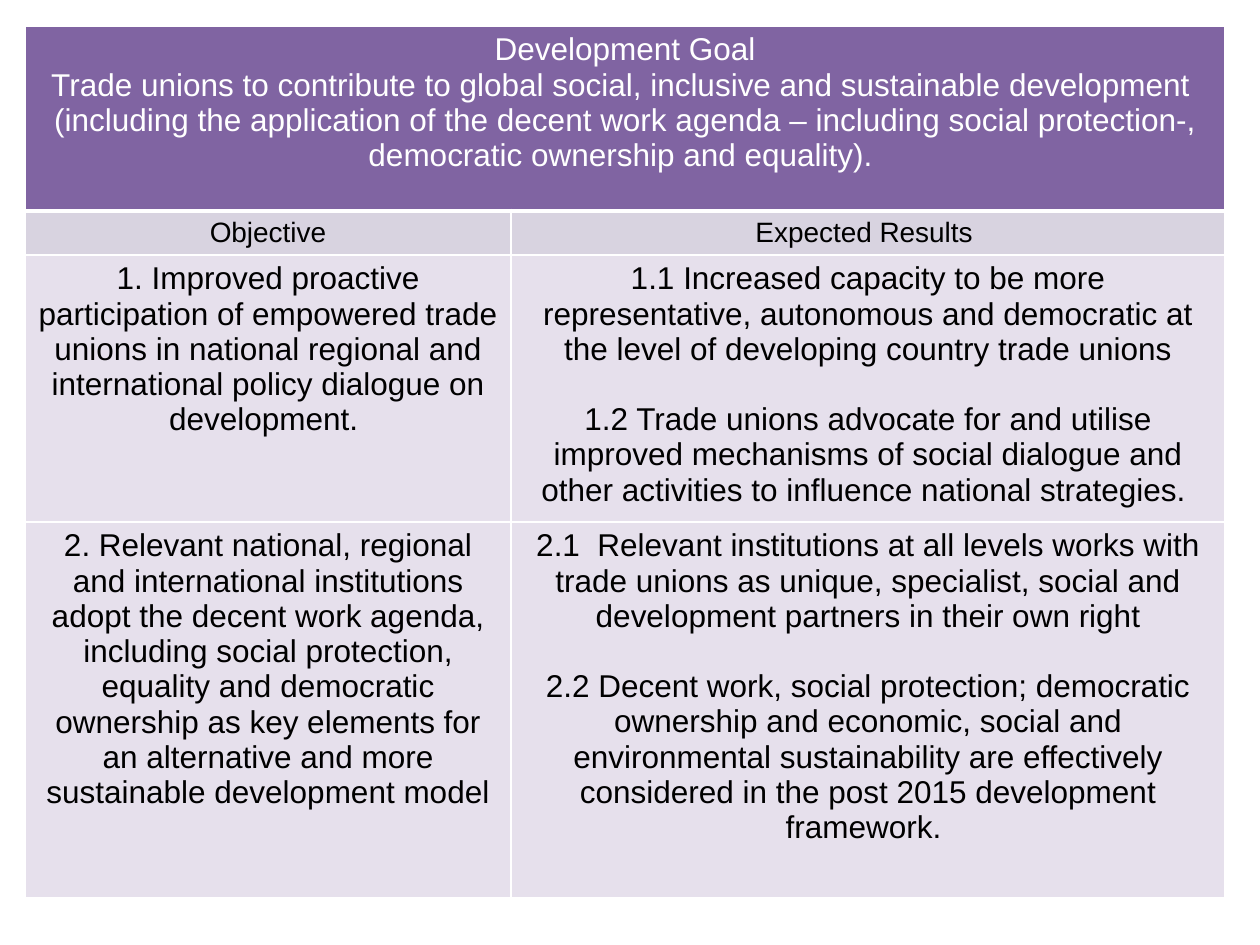
"""Build a slide with a development goal, its objectives and expected results."""
from lxml import etree
from pptx import Presentation
from pptx.dml.color import RGBColor
from pptx.enum.text import PP_ALIGN
from pptx.oxml.ns import qn
from pptx.util import Emu, Pt

CENTER = PP_ALIGN.CENTER
PX = 914400 / 126
SLIDE_SIZE = (1260, 945)
TABLE_ORIGIN = (25, 26)
COLUMN_WIDTHS = (486, 714)
WHITE, BLACK = "FFFFFF", "000000"

GOAL = [
    "Development Goal",
    "Trade unions to contribute to global social, inclusive and sustainable development  "
    "(including the application of the decent work agenda – including social protection-, "
    "democratic ownership and equality). ",
]
HEADINGS = (["Objective"], ["Expected Results "])
FIRST_OBJECTIVE = (
    ["1. Improved proactive participation of empowered trade unions in national regional "
     "and international policy dialogue on development. "],
    ["1.1 Increased capacity to be more representative, autonomous and democratic at the "
     "level of developing country trade unions",
     "1.2 Trade unions advocate for and utilise improved mechanisms of social dialogue and "
     "other activities to influence national strategies. "],
)
SECOND_OBJECTIVE = (
    ["2. Relevant national, regional and international institutions adopt the decent work "
     "agenda, including social protection, equality and democratic ownership as key elements "
     "for an alternative and more sustainable development model"],
    ["2.1  Relevant institutions at all levels works with trade unions as unique, specialist, "
     "social and development partners in their own right",
     "2.2 Decent work, social protection; democratic ownership and economic, social and "
     "environmental sustainability are effectively considered in the post 2015 development "
     "framework. "],
)
GOAL_STYLE = {"fill": "8064A2", "color": WHITE, "bottom": 3}
RESULT_STYLE = {"fill": "E6E0EC", "gap": 20}
ROWS = [
    (185, (GOAL, []), GOAL_STYLE),
    (44, HEADINGS, {"fill": "D8D3E0", "size": 16}),
    (267, FIRST_OBJECTIVE, RESULT_STYLE),
    (376, SECOND_OBJECTIVE, RESULT_STYLE),
]


def px(length):
    return Emu(round(length * PX))


def rgb(value):
    return RGBColor.from_string(value)


def write(frame, paragraphs, size=18, color=BLACK, gap=0):
    frame.word_wrap = True
    for index, wording in enumerate(paragraphs):
        paragraph = frame.add_paragraph() if index else frame.paragraphs[0]
        paragraph.alignment = CENTER
        paragraph.space_before = Pt(gap if index else 0)
        run = paragraph.add_run()
        run.text = wording
        run.font.name = "Arial"
        run.font.size = Pt(size)
        run.font.bold = False
        run.font.color.rgb = rgb(color)


def draw_borders(cell, bottom):
    properties = cell._tc.get_or_add_tcPr()
    for side, width in (("L", 1), ("R", 1), ("T", 1), ("B", bottom)):
        line = etree.SubElement(properties, qn(f"a:ln{side}"), w=str(Pt(width)))
        solid = etree.SubElement(line, qn("a:solidFill"))
        etree.SubElement(solid, qn("a:srgbClr"), val=WHITE)


def style_cell(cell, paragraphs, fill, bottom=1, **text_format):
    draw_borders(cell, bottom)
    cell.fill.solid()
    cell.fill.fore_color.rgb = rgb(fill)
    write(cell.text_frame, paragraphs, **text_format)


def main():
    deck = Presentation()
    deck.slide_width, deck.slide_height = map(px, SLIDE_SIZE)
    slide = deck.slides.add_slide(deck.slide_layouts[6])
    extent = (sum(COLUMN_WIDTHS), sum(height for height, _, _ in ROWS))
    goals = slide.shapes.add_table(
        len(ROWS), len(COLUMN_WIDTHS), *map(px, TABLE_ORIGIN + extent)).table
    goals.horz_banding = False
    for column, width in zip(goals.columns, COLUMN_WIDTHS):
        column.width = px(width)
    for index, (height, contents, style) in enumerate(ROWS):
        goals.rows[index].height = px(height)
        for cell, paragraphs in zip(goals.rows[index].cells, contents):
            style_cell(cell, paragraphs, **style)
    goals.cell(0, 0).merge(goals.cell(0, 1))
    deck.save("out.pptx")


if __name__ == "__main__":
    main()
